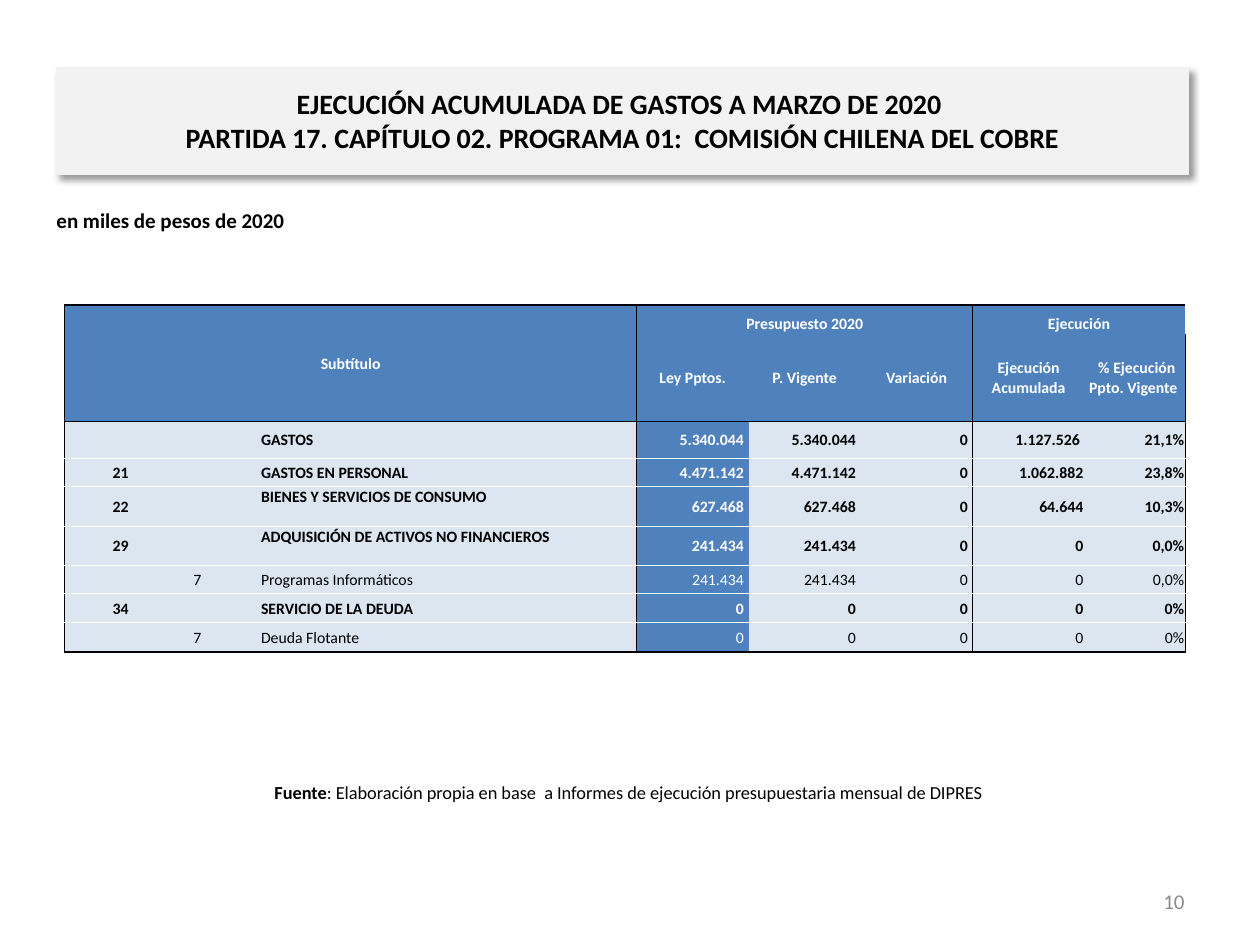
from dataclasses import dataclass

from lxml import etree
from pptx import Presentation, util as u
from pptx.dml import color as dc
from pptx.enum import text as t
from pptx.oxml import ns

Pt = u.Pt
LEFT, MID, RIGHT, JUST = (
    t.PP_ALIGN.LEFT, t.PP_ALIGN.CENTER, t.PP_ALIGN.RIGHT, t.PP_ALIGN.JUSTIFY)
TOP, CENTER, BASE = (
    t.MSO_ANCHOR.TOP, t.MSO_ANCHOR.MIDDLE, t.MSO_ANCHOR.BOTTOM)


@dataclass(frozen=True)
class Theme:
    font: str = "Calibri"
    ink: str = "000000"
    white: str = "FFFFFF"
    gray: str = "8C8C8C"
    panel: str = "F2F2F2"
    blue: str = "4F81BD"
    pale: str = "DCE6F1"
    head: float = 16
    unit: float = 12
    note: float = 10.5
    body: float = 9


@dataclass(frozen=True)
class Box:
    x: float
    y: float
    w: float
    h: float


@dataclass(frozen=True)
class Item:
    code: str
    sub: str
    name: str
    vals: tuple[str, ...]
    high: float
    pos: t.MSO_ANCHOR = CENTER

    @property
    def bold(self) -> bool:
        return not self.sub


TH = Theme()
COLS = (64, 23.8, 23.8, 215.4, 64, 64, 64, 64, 57.6)
HEAD = (16.6, 49.7)
GROUPS = ((0, 0, 1, 3, "Subtítulo", CENTER),
          (0, 4, 0, 6, "Presupuesto 2020", BASE),
          (0, 7, 0, 8, "Ejecución", BASE))
LABELS = ("Ley Pptos.", "P. Vigente", "Variación",
          "Ejecución Acumulada", " % Ejecución Ppto. Vigente ")
ITEMS = (
    Item("", "", "GASTOS",
         ("5.340.044 ", "5.340.044 ", "0 ", "1.127.526 ", "21,1%"), 21.2),
    Item("21", "", "GASTOS EN PERSONAL",
         ("4.471.142 ", "4.471.142 ", "0 ", "1.062.882", "23,8%"), 16.2),
    Item("22", "", "BIENES Y SERVICIOS DE CONSUMO",
         ("627.468 ", "627.468 ", "0 ", "64.644", "10,3%"), 22.6, TOP),
    Item("29", "", "ADQUISICIÓN DE ACTIVOS NO FINANCIEROS",
         ("241.434 ", "241.434 ", "0 ", "0", "0,0%"), 22.6, TOP),
    Item("", "7", "Programas Informáticos",
         ("241.434 ", "241.434 ", "0 ", "0", "0,0%"), 16.2),
    Item("34", "", "SERVICIO DE LA DEUDA",
         ("0 ", "0 ", "0 ", "0", "0%"), 16.4),
    Item("", "7", "Deuda Flotante",
         ("0 ", "0 ", "0 ", "0", "0%"), 17),
)


def add_run(para, words: str, size: float, hue: str, bold: bool) -> None:
    run = para.add_run()
    run.text = words
    font = run.font
    font.name, font.size, font.bold = TH.font, Pt(size), bold
    font.color.rgb = dc.RGBColor.from_string(hue)


def place(shape, box: Box) -> None:
    shape.left, shape.top = Pt(box.x), Pt(box.y)
    shape.width, shape.height = Pt(box.w), Pt(box.h)


def add_text(slide, box: Box, runs: tuple, size: float, hue: str,
             align: t.PP_ALIGN, pos: t.MSO_ANCHOR) -> None:
    """Add a one-paragraph box from (words, bold) pairs."""
    shape = slide.shapes.add_textbox(0, 0, 0, 0)
    place(shape, box)
    frame = shape.text_frame
    frame.word_wrap, frame.vertical_anchor = True, pos
    para = frame.paragraphs[0]
    para.alignment = align
    for words, bold in runs:
        add_run(para, words, size, hue, bold)


def add_title(slide, box: Box, lines: tuple[str, ...]) -> None:
    shape = slide.shapes.title
    place(shape, box)
    panel = dc.RGBColor.from_string(TH.panel)
    shape.fill.solid()
    shape.fill.fore_color.rgb = panel
    shape.line.color.rgb, shape.line.width = panel, Pt(0.75)
    fx = etree.SubElement(shape.element.spPr, ns.qn("a:effectLst"))
    shade = etree.SubElement(
        fx, ns.qn("a:outerShdw"), blurRad=str(Pt(4)), dist=str(Pt(3)),
        dir=str(45 * 60000), algn="tl", rotWithShape="0")
    hue = etree.SubElement(shade, ns.qn("a:srgbClr"), val=TH.ink)
    etree.SubElement(hue, ns.qn("a:alpha"), val="40000")
    frame = shape.text_frame
    frame.word_wrap, frame.vertical_anchor = True, CENTER
    frame.auto_size = t.MSO_AUTO_SIZE.NONE
    para = frame.paragraphs[0]
    para.alignment = MID
    for i, line in enumerate(lines):
        if i:
            para.add_line_break()
        add_run(para, line, TH.head, TH.ink, True)


def edges(row: int, col: int, last: int) -> dict:
    """Map each side of a cell to its (colour, width)."""
    thin, thick, pale = (TH.ink, 0.5), (TH.ink, 1), (TH.white, 0.5)
    tops = {0: thick, 1: None, 2: thin}
    bases = {0: None, 1: thin, last: thick}
    return {"lnL": {0: thick, 4: thin, 7: thin}.get(col),
            "lnR": {3: thin, 6: thin, 8: thick}.get(col),
            "lnT": tops.get(row, pale),
            "lnB": bases.get(row, pale)}


def style(cell, row: int, col: int, last: int) -> None:
    """Set a cell's borders, fill, margins and empty-text size."""
    props = cell._tc.get_or_add_tcPr()
    for tag, edge in edges(row, col, last).items():
        hue, width = edge or (None, 0)
        line = etree.SubElement(props, ns.qn(f"a:{tag}"), w=str(Pt(width)))
        if hue:
            fill = etree.SubElement(line, ns.qn("a:solidFill"))
            etree.SubElement(fill, ns.qn("a:srgbClr"), val=hue)
        else:
            etree.SubElement(line, ns.qn("a:noFill"))
    cell.fill.solid()
    cell.fill.fore_color.rgb = dc.RGBColor.from_string(
        TH.blue if row < 2 or col == 4 else TH.pale)
    cell.margin_left = cell.margin_right = cell.margin_top = Pt(0.72)
    cell.margin_bottom = 0
    para = cell.text_frame.paragraphs[0]
    etree.SubElement(para._p, ns.qn("a:endParaRPr"), sz=str(int(TH.body * 100)))


def write(cell, words: str, hue: str, bold: bool, align: t.PP_ALIGN,
          pos: t.MSO_ANCHOR = CENTER) -> None:
    cell.vertical_anchor = pos
    para = cell.text_frame.paragraphs[0]
    para.alignment = align
    if words:
        add_run(para, words, TH.body, hue, bold)


def add_grid(slide, x: float, y: float) -> None:
    highs = HEAD + tuple(item.high for item in ITEMS)
    grid = slide.shapes.add_table(
        len(highs), len(COLS), Pt(x), Pt(y), Pt(sum(COLS)), Pt(sum(highs))).table
    grid.first_row = grid.horz_banding = False
    for part, width in zip(grid.columns, COLS):
        part.width = Pt(width)
    for r, high in enumerate(highs):
        grid.rows[r].height = Pt(high)
        for c in range(len(COLS)):
            style(grid.cell(r, c), r, c, len(highs) - 1)
    for r, c, end, stop, words, pos in GROUPS:
        grid.cell(r, c).merge(grid.cell(end, stop))
        write(grid.cell(r, c), words, TH.white, True, MID, pos)
    for c, words in enumerate(LABELS, 4):
        write(grid.cell(1, c), words, TH.white, True, MID)
    for r, item in enumerate(ITEMS, len(HEAD)):
        write(grid.cell(r, 0), item.code, TH.ink, item.bold, MID)
        write(grid.cell(r, 1), item.sub, TH.ink, item.bold, MID)
        write(grid.cell(r, 3), item.name, TH.ink, item.bold, JUST, item.pos)
        for c, val in enumerate(item.vals, 4):
            hue = TH.white if c == 4 else TH.ink
            write(grid.cell(r, c), val, hue, item.bold, RIGHT)


def main() -> None:
    deck = Presentation()
    deck.slide_width, deck.slide_height = Pt(720), Pt(540)
    slide = deck.slides.add_slide(deck.slide_layouts[5])
    add_title(slide, Box(32.4, 38.4, 646.6, 61), (
        "EJECUCIÓN ACUMULADA DE GASTOS A MARZO DE 2020 ",
        "PARTIDA 17. CAPÍTULO 02. PROGRAMA 01:  COMISIÓN CHILENA DEL COBRE"))
    add_text(slide, Box(25.2, 115.2, 563.8, 24.5),
             (("en miles de pesos de 2020", True),), TH.unit, TH.ink, LEFT, TOP)
    add_grid(slide, 36.9, 174.3)
    add_text(slide, Box(36.7, 438.5, 645.1, 28.8), (
        ("Fuente", True),
        (": Elaboración propia en base  a Informes de ejecución "
         "presupuestaria mensual de DIPRES", False)),
        TH.note, TH.ink, MID, CENTER)
    add_text(slide, Box(516.2, 500.4, 167.8, 28.8),
             (("10", False),), TH.unit, TH.gray, RIGHT, CENTER)
    deck.save("out.pptx")


if __name__ == "__main__":
    main()
